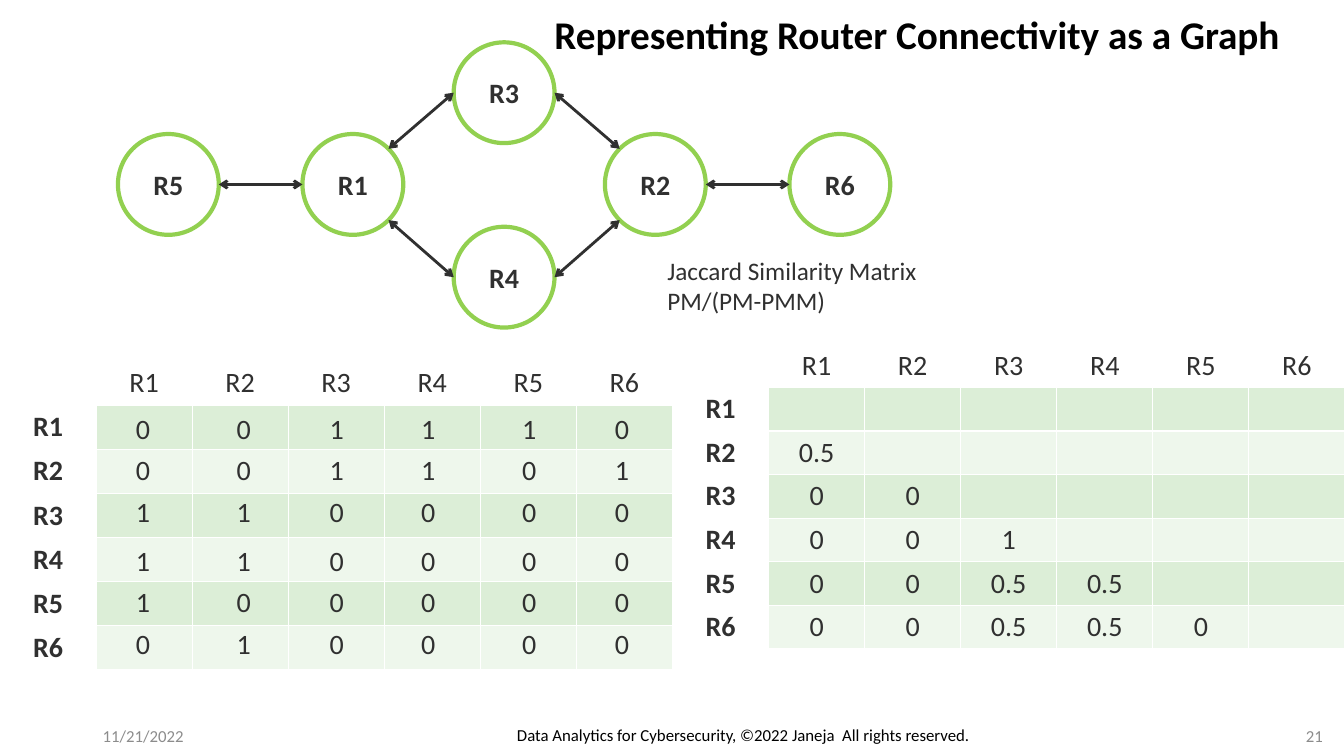
import math

import pptx
import pptx.dml.color
import pptx.enum.shapes
import pptx.enum.text
import pptx.util
from lxml import etree
from pptx.util import Inches

RGBColor = pptx.dml.color.RGBColor
ALIGN = pptx.enum.text.PP_ALIGN
ANCHOR = pptx.enum.text.MSO_ANCHOR
INK = RGBColor(0x30, 0x30, 0x30)
BLACK = RGBColor(0, 0, 0)
GRAY = RGBColor(0x8C, 0x8C, 0x8C)
RING = RGBColor(0x92, 0xD0, 0x50)
BANDS = [RGBColor(0xDC, 0xEE, 0xD7), RGBColor(0xEE, 0xF7, 0xEC)]


def write(frame, text, size=20, color=INK, bold=False, align=ALIGN.LEFT,
          anchor=ANCHOR.TOP, wrap=True):
    """Fill a text frame with one formatted paragraph."""
    frame.word_wrap = wrap
    frame.vertical_anchor = anchor
    para = frame.paragraphs[0]
    para.text = text
    para.alignment = align
    for span in para.runs:
        span.font.name = "Calibri"
        span.font.size = pptx.util.Pt(size)
        span.font.bold = bold
        span.font.color.rgb = color


def add_label(left, top, width, height, text, **look):
    box = page.shapes.add_textbox(Inches(left), Inches(top), Inches(width), Inches(height))
    write(box.text_frame, text, **look)


deck = pptx.Presentation()
deck.slide_width, deck.slide_height = Inches(13.33), Inches(7.5)
page = deck.slides.add_slide(deck.slide_layouts[6])

# Router graph: circle centres, and links with the angle each one leaves at
RADIUS = 0.5
routers = {"R1": (3.5, 1.83), "R2": (6.5, 1.83), "R3": (5, 0.92),
           "R4": (5, 2.75), "R5": (1.67, 1.83), "R6": (8.33, 1.83)}
links = [("R5", 0, "R1", 180), ("R2", 0, "R6", 180),
         ("R1", -45, "R3", 180), ("R1", 45, "R4", 180),
         ("R3", 0, "R2", -135), ("R4", 0, "R2", 135)]

for name, (x, y) in routers.items():
    circle = page.shapes.add_shape(
        pptx.enum.shapes.MSO_SHAPE.OVAL, Inches(x - RADIUS), Inches(y - RADIUS),
        Inches(2 * RADIUS), Inches(2 * RADIUS))
    circle.shadow.inherit = False
    circle.fill.background()
    circle.line.color.rgb = RING
    circle.line.width = pptx.util.Pt(3)
    write(circle.text_frame, name, bold=True, align=ALIGN.CENTER, anchor=ANCHOR.MIDDLE)

for start, start_angle, end, end_angle in links:
    ends = []
    for name, angle in ((start, start_angle), (end, end_angle)):
        x, y = routers[name]
        ends.append(Inches(x + RADIUS * math.cos(math.radians(angle))))
        ends.append(Inches(y + RADIUS * math.sin(math.radians(angle))))
    link = page.shapes.add_connector(pptx.enum.shapes.MSO_CONNECTOR.STRAIGHT, *ends)
    link.line.color.rgb = INK
    link.line.width = pptx.util.Pt(2)
    outline = link.line._get_or_add_ln()
    for tag in ("a:headEnd", "a:tailEnd"):
        etree.SubElement(outline, pptx.oxml.ns.qn(tag), type="arrow")
    etree.SubElement(link._element.spPr, pptx.oxml.ns.qn("a:effectLst"))

# Adjacency grid on the left, similarity matrix on the right
names = list(routers)
similarity = [[], ["0.5"], ["0", "0"], ["0", "0", "1"],
              ["0", "0", "0.5", "0.5"], ["0", "0", "0.5", "0.5", "0"]]
count = len(names) + 1

for left, top, height, values in ((0, 3.58, 3.07, [[]] * len(names)),
                                  (6.67, 3.41, 3.03, similarity)):
    grid = page.shapes.add_table(count, count, Inches(left), Inches(top),
                                 Inches(6.67), Inches(height)).table
    grid.first_row = grid.horz_banding = False
    for line in grid.rows:
        line.height = Inches(height / count)
    contents = [["", *names]] + [[name, *row] for name, row in zip(names, values)]
    for row, texts in enumerate(contents):
        for column in range(count):
            cell = grid.cell(row, column)
            cell.margin_top = cell.margin_bottom = Inches(0.04)
            cell.vertical_anchor = ANCHOR.MIDDLE
            if row and column:
                cell.fill.solid()
                cell.fill.fore_color.rgb = BANDS[(row - 1) % 2]
            else:
                cell.fill.background()
            if column < len(texts) and texts[column]:
                write(cell.text_frame, texts[column], bold=column == 0,
                      align=ALIGN.CENTER, anchor=None, wrap=None)

linked = {frozenset((start, end)) for start, _, end, _ in links}
digit_lefts = [1.25, 2.25, 3.17, 4.08, 5.08, 6]
digit_tops = [4.03, 4.44, 4.86, 5.34, 5.75, 6.17]
for row_name, top in zip(names, digit_tops):
    for column_name, left in zip(names, digit_lefts):
        digit = "1" if frozenset((row_name, column_name)) in linked else "0"
        add_label(left, top, 0.33, 0.44, digit)

# Title, caption and footer
add_label(6.52, 2.48, 6.67, 0.71, "Jaccard Similarity Matrix\vPM/(PM-PMM)", size=18)
add_label(5.4, 0.05, 7.49, 0.57, "Representing Router Connectivity as a Graph",
          size=28, color=BLACK, bold=True, wrap=False)
add_label(0.92, 7.1, 1.01, 0.4, "11/21/2022", size=12, color=GRAY, anchor=ANCHOR.MIDDLE)
add_label(4.91, 7.04, 4.93, 0.4,
          "Data Analytics for Cybersecurity, ©2022 Janeja  All rights reserved.",
          size=12, color=BLACK, align=ALIGN.CENTER, anchor=ANCHOR.BOTTOM)
add_label(10.22, 7.1, 3, 0.4, "21", size=12, color=GRAY,
          align=ALIGN.RIGHT, anchor=ANCHOR.MIDDLE)

deck.save("out.pptx")
